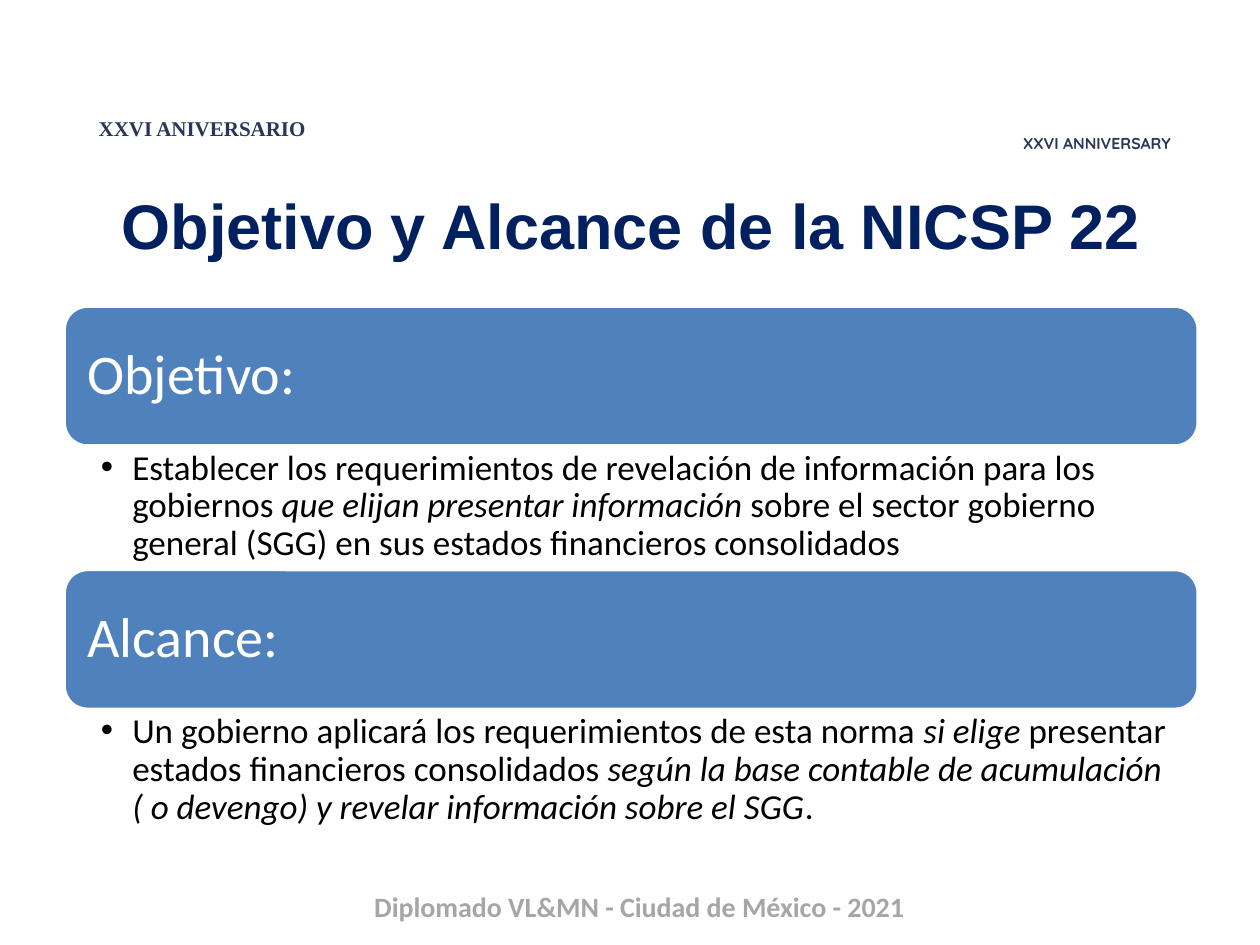
from lxml.etree import SubElement
from pptx import Presentation
from pptx.dml.color import RGBColor
from pptx.enum.shapes import MSO_SHAPE
from pptx.enum.text import MSO_ANCHOR, PP_ALIGN
from pptx.oxml.ns import qn
from pptx.util import Inches, Pt

COLORS = {"navy": "002060", "slate": "2A3558", "gray": "A6A6A6",
          "blue": "4F81BD", "white": "FFFFFF", "black": "000000"}
LEFT, WIDTH = 0.51, 9
HEADER_HEIGHT, BODY_HEIGHT = 1.11, 0.98
SECTIONS_TOP = 2.43

# Each section holds a heading and its text spans as (wording, italic)
SECTIONS = [
    ("Objetivo:", [
        ("Establecer los requerimientos de revelación de información para los gobiernos ", False),
        ("que elijan presentar información", True),
        (" sobre el sector gobierno general (SGG) en sus estados financieros consolidados", False),
    ]),
    ("Alcance:", [
        ("Un gobierno aplicará los requerimientos de esta norma ", False),
        ("si elige ", True),
        ("presentar estados financieros consolidados ", False),
        ("según la base contable de acumulación ( o devengo) y revelar información sobre el SGG", True),
        (".", False),
    ]),
]

# Wording, box, font, size, colour
LABELS = [
    ("Diplomado VL&MN - Ciudad de México - 2021", (1.61, 7.01, 6.93, 0.37), "Calibri", 16, "gray"),
    ("XXVI ANIVERSARIO", (0.51, 0.87, 2.19, 0.3), "Times New Roman", 12, "slate"),
    ("XXVI ANNIVERSARY", (8, 1.01, 1.41, 0.25), "Quicksand", 9, "slate"),
]


def color(name):
    return RGBColor.from_string(COLORS[name])


def inches(box):
    return [Inches(value) for value in box]


def set_margins(frame, left, top, right, bottom):
    frame.margin_left, frame.margin_top = Inches(left), Inches(top)
    frame.margin_right, frame.margin_bottom = Inches(right), Inches(bottom)


def format_span(span, font, size, color_name, bold=False, italic=False):
    span.font.name, span.font.size = font, Pt(size)
    span.font.bold, span.font.italic = bold, italic
    span.font.color.rgb = color(color_name)


def add_bullet(para):
    properties = para._p.get_or_add_pPr()
    properties.set("marL", str(Inches(0.25)))
    properties.set("indent", str(-Inches(0.25)))
    SubElement(properties, qn("a:buFont")).set("typeface", "Arial")
    SubElement(properties, qn("a:buChar")).set("char", "•")


def add_label(page, text, box, font, size, color_name):
    frame = page.shapes.add_textbox(*inches(box)).text_frame
    frame.word_wrap = True
    para = frame.paragraphs[0]
    para.text = text
    para.alignment = PP_ALIGN.CENTER
    format_span(para.runs[0], font, size, color_name, bold=True)


def add_title(page, text, box):
    title = page.shapes.title
    title.left, title.top, title.width, title.height = inches(box)
    frame = title.text_frame
    frame.text = text
    frame.vertical_anchor = MSO_ANCHOR.MIDDLE
    frame.paragraphs[0].alignment = PP_ALIGN.CENTER
    format_span(frame.paragraphs[0].runs[0], "Arial", 36, "navy", bold=True)


def add_section(page, heading, spans, left, top, width):
    """Place a heading bar with its bulleted text directly below."""
    bar = page.shapes.add_shape(MSO_SHAPE.ROUNDED_RECTANGLE,
                                *inches((left, top, width, HEADER_HEIGHT)))
    bar.shadow.inherit = False
    bar.fill.solid()
    bar.fill.fore_color.rgb = color("blue")
    bar.line.color.rgb = color("white")
    bar.line.width = Pt(2)
    frame = bar.text_frame
    frame.word_wrap = True
    frame.vertical_anchor = MSO_ANCHOR.MIDDLE
    set_margins(frame, 0.13, 0.13, 0.13, 0.13)
    para = frame.paragraphs[0]
    para.text = heading
    para.alignment = PP_ALIGN.LEFT
    para.line_spacing = 0.9
    format_span(para.runs[0], "Calibri", 32, "white")

    body = page.shapes.add_textbox(
        *inches((left, top + HEADER_HEIGHT, width, BODY_HEIGHT)))
    frame = body.text_frame
    frame.word_wrap = True
    set_margins(frame, 0.29, 0.03, 0.16, 0.03)
    para = frame.paragraphs[0]
    add_bullet(para)
    para.line_spacing = 0.9
    for text, italic in spans:
        span = para.add_run()
        span.text = text
        format_span(span, "Calibri", 20, "black", italic=italic)


def main():
    deck = Presentation()
    deck.slide_width, deck.slide_height = Inches(10), Inches(7.5)
    page = deck.slides.add_slide(deck.slide_layouts[5])
    for label in LABELS:
        add_label(page, *label)
    add_title(page, "Objetivo y Alcance de la NICSP 22", (LEFT, 1.39, WIDTH, 0.78))
    for index, (heading, spans) in enumerate(SECTIONS):
        top = SECTIONS_TOP + index * (HEADER_HEIGHT + BODY_HEIGHT)
        add_section(page, heading, spans, LEFT, top, WIDTH)
    deck.save("out.pptx")


if __name__ == "__main__":
    main()
